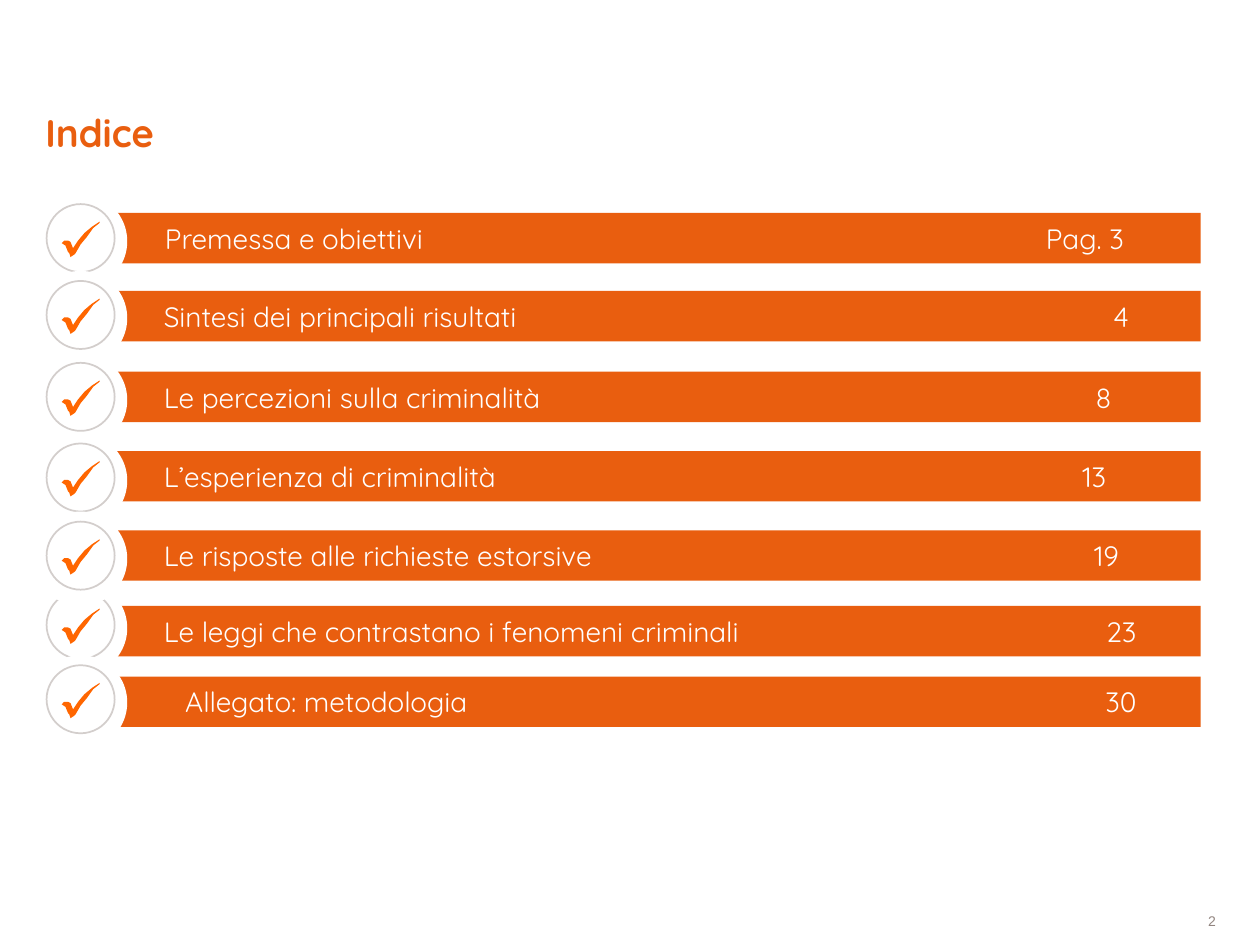
from dataclasses import dataclass

import pptx
import pptx.dml.color
import pptx.enum.shapes
import pptx.enum.text
import pptx.oxml.ns
import pptx.util
from lxml import etree

Inches = pptx.util.Inches
Pt = pptx.util.Pt
RGBColor = pptx.dml.color.RGBColor
SHAPE = pptx.enum.shapes.MSO_SHAPE
ANCHOR = pptx.enum.text.MSO_ANCHOR
ALIGN = pptx.enum.text.PP_ALIGN

ORANGE = RGBColor(0xE9, 0x5E, 0x0F)
TICK_ORANGE = RGBColor(0xFF, 0x66, 0x00)
RING_GREY = RGBColor(0xD3, 0xCE, 0xCC)
NUMBER_GREY = RGBColor(0x92, 0x85, 0x80)
WHITE = RGBColor(0xFF, 0xFF, 0xFF)

BAR_RIGHT = 9.53
BAR_HEIGHT = 0.4
TEXT_INSET = 0.55
BADGE_LEFT = 0.27
TICK = [
    (0.30, 0), (0.30, 0.01), (0.25, 0.05), (0.20, 0.12), (0.15, 0.18),
    (0.11, 0.25), (0.10, 0.26), (0.07, 0.28), (0.06, 0.25), (0.05, 0.24),
    (0.03, 0.19), (0, 0.17), (0.02, 0.15), (0.05, 0.15), (0.07, 0.16),
    (0.09, 0.21), (0.13, 0.15), (0.18, 0.09), (0.24, 0.04),
]


@dataclass
class Entry:
    title: str
    number: str
    bar_top: float
    badge_top: float
    number_right: float
    bar_left: float = 0.75


# Back to front: each badge may cover part of an earlier one.
ENTRIES = [
    Entry("Le leggi che contrastano i fenomeni criminali", "23", 4.81, 4.61, 9.02),
    Entry("Premessa e obiettivi", "Pag. 3", 1.69, 1.54, 8.92, 0.76),
    Entry("Sintesi dei principali risultati", "4", 2.31, 2.15, 8.96),
    Entry("Le percezioni sulla criminalità", "8", 2.95, 2.8, 8.82),
    Entry("L’esperienza di criminalità", "13", 3.58, 3.44, 8.78),
    Entry("Le risposte alle richieste estorsive", "19", 4.21, 4.06, 8.88),
    Entry("Allegato: metodologia", "30", 5.37, 5.2, 9.02, 0.92),
]


def clear_margins(frame) -> None:
    frame.margin_left = frame.margin_right = 0
    frame.margin_top = frame.margin_bottom = 0


def set_font(paragraph, name: str, size: float, color: RGBColor) -> None:
    paragraph.font.name = name
    paragraph.font.size = Pt(size)
    paragraph.font.color.rgb = color


def add_right_tab(paragraph, position: float) -> None:
    properties = paragraph._p.get_or_add_pPr()
    tabs = etree.SubElement(properties, pptx.oxml.ns.qn("a:tabLst"))
    etree.SubElement(tabs, pptx.oxml.ns.qn("a:tab"), pos=str(Inches(position)), algn="r")


def add_bar(page, entry: Entry) -> None:
    bar = page.shapes.add_shape(
        SHAPE.RECTANGLE, Inches(entry.bar_left), Inches(entry.bar_top),
        Inches(BAR_RIGHT - entry.bar_left), Inches(BAR_HEIGHT))
    bar.shadow.inherit = False
    bar.fill.solid()
    bar.fill.fore_color.rgb = ORANGE
    bar.line.fill.background()
    frame = bar.text_frame
    frame.margin_left = Inches(TEXT_INSET)
    frame.vertical_anchor = ANCHOR.MIDDLE
    paragraph = frame.paragraphs[0]
    paragraph.text = f"{entry.title}\t{entry.number}"
    paragraph.alignment = ALIGN.LEFT
    add_right_tab(paragraph, entry.number_right - entry.bar_left - TEXT_INSET)
    set_font(paragraph, "Quicksand", 16, WHITE)


def add_badge(page, top: float) -> None:
    """Draw a white disc with a grey ring and an orange tick."""
    group = page.shapes.add_group_shape()
    disc = group.shapes.add_shape(
        SHAPE.OVAL, Inches(BADGE_LEFT), Inches(top), Inches(0.74), Inches(0.75))
    disc.fill.solid()
    disc.fill.fore_color.rgb = WHITE
    disc.line.fill.background()

    ring = group.shapes.add_shape(
        SHAPE.OVAL, Inches(BADGE_LEFT + 0.1), Inches(top + 0.08), Inches(0.54), Inches(0.54))
    ring.fill.background()
    ring.line.color.rgb = RING_GREY
    ring.line.width = Pt(1)

    points = [(Inches(BADGE_LEFT + 0.22 + x), Inches(top + 0.22 + y)) for x, y in TICK]
    builder = group.shapes.build_freeform(*points[0])
    builder.add_line_segments(points[1:], close=True)
    tick = builder.convert_to_shape()
    tick.fill.solid()
    tick.fill.fore_color.rgb = TICK_ORANGE
    tick.line.fill.background()

    for shape in (disc, ring, tick):
        shape.shadow.inherit = False


def add_title(page) -> None:
    title = page.shapes.title
    title.left, title.top = Inches(0.36), Inches(0.44)
    title.width, title.height = Inches(5.88), Inches(0.79)
    frame = title.text_frame
    clear_margins(frame)
    frame.auto_size = pptx.enum.text.MSO_AUTO_SIZE.NONE
    frame.vertical_anchor = ANCHOR.BOTTOM
    paragraph = frame.paragraphs[0]
    paragraph.text = "Indice"
    paragraph.alignment = ALIGN.LEFT
    set_font(paragraph, "Quicksand", 22, ORANGE)
    paragraph.font.bold = True


def add_page_number(page) -> None:
    box = page.shapes.add_textbox(Inches(8.31), Inches(7.25), Inches(1.34), Inches(0.12))
    frame = box.text_frame
    clear_margins(frame)
    frame.word_wrap = True
    frame.vertical_anchor = ANCHOR.MIDDLE
    paragraph = frame.paragraphs[0]
    paragraph.text = "2"
    paragraph.alignment = ALIGN.RIGHT
    set_font(paragraph, "Arial", 8, NUMBER_GREY)


def main() -> None:
    deck = pptx.Presentation()
    deck.slide_width, deck.slide_height = Inches(10), Inches(7.5)
    page = deck.slides.add_slide(deck.slide_layouts.get_by_name("Title Only"))
    add_title(page)
    add_page_number(page)
    for entry in ENTRIES:
        add_bar(page, entry)
        add_badge(page, entry.badge_top)
    deck.save("out.pptx")


if __name__ == "__main__":
    main()
